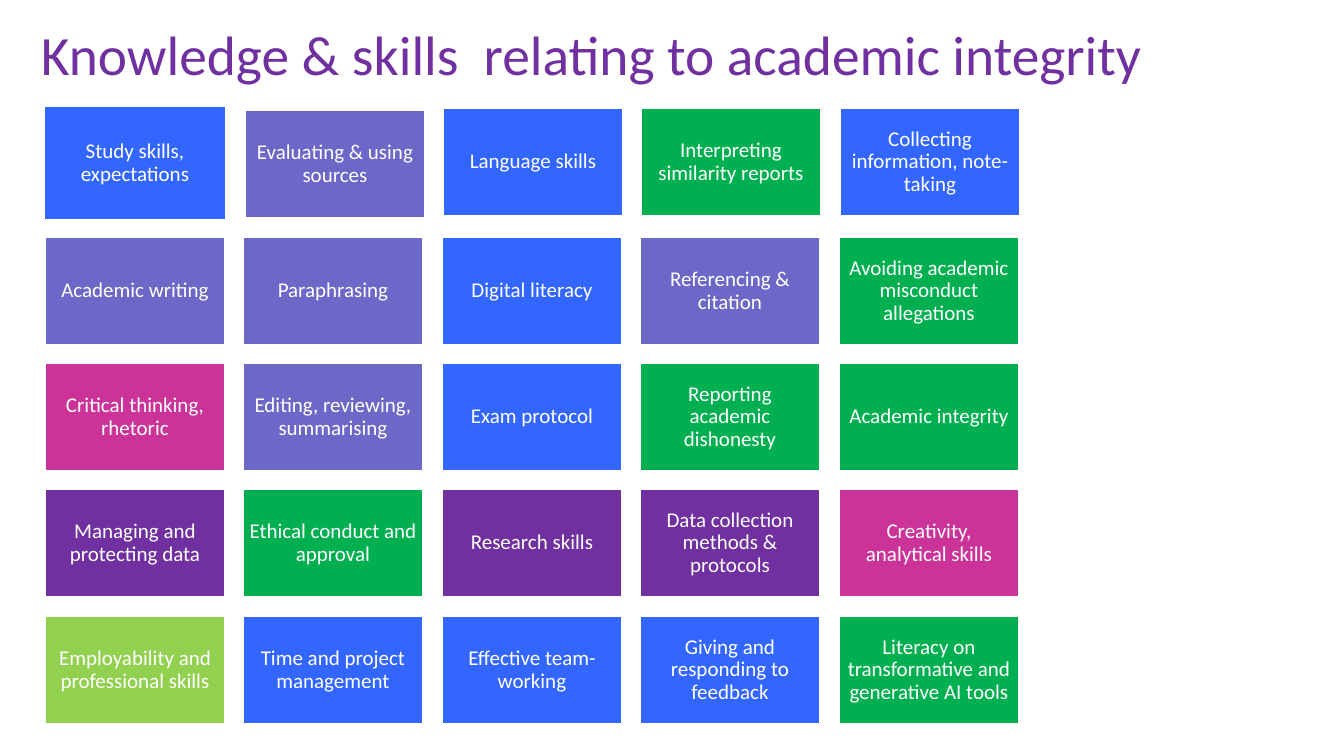
import pptx
import pptx.util
import pptx.dml.color
import pptx.enum.shapes
import pptx.enum.text
from dataclasses import dataclass


@dataclass(frozen=True)
class Theme:
    font: str = "Calibri"
    title_size: float = 39.6
    tile_size: float = 15
    white: str = "FFFFFF"
    blue: str = "3366FF"
    lilac: str = "6D68C8"
    green: str = "00B050"
    pink: str = "CC3399"
    purple: str = "7030A0"
    lime: str = "92D050"


theme = Theme()


def px(n):
    return pptx.util.Emu(round(n * 914400 / 100.8))


def write(sp, text, size, color, align, inset_x, inset_y):
    tf = sp.text_frame
    frame_format = {
        "word_wrap": True,
        "vertical_anchor": pptx.enum.text.MSO_ANCHOR.MIDDLE,
        "margin_left": px(inset_x),
        "margin_right": px(inset_x),
        "margin_top": px(inset_y),
        "margin_bottom": px(inset_y),
    }
    for name, value in frame_format.items():
        setattr(tf, name, value)
    p = tf.paragraphs[0]
    p.alignment = align
    p.line_spacing = 0.9
    r = p.add_run()
    r.text = text
    for name, value in {"name": theme.font, "size": pptx.util.Pt(size)}.items():
        setattr(r.font, name, value)
    r.font.color.rgb = pptx.dml.color.RGBColor.from_string(color)


prs = pptx.Presentation()
prs.slide_width, prs.slide_height = px(1344), px(756)
s = prs.slides.add_slide(prs.slide_layouts[6])

# Title
sp = s.shapes.add_textbox(px(31), px(40), px(1312), px(35))
write(sp, "Knowledge & skills  relating to academic integrity",
      theme.title_size, theme.purple, pptx.enum.text.PP_ALIGN.LEFT, 10, 5)

# Skill tiles, row by row
skills = [
    [("Study skills, expectations", theme.blue),
     ("Evaluating & using sources", theme.lilac),
     ("Language skills", theme.blue),
     ("Interpreting similarity reports", theme.green),
     ("Collecting information, note-taking", theme.blue)],
    [("Academic writing", theme.lilac),
     ("Paraphrasing", theme.lilac),
     ("Digital literacy", theme.blue),
     ("Referencing & citation", theme.lilac),
     ("Avoiding academic misconduct allegations", theme.green)],
    [("Critical thinking, rhetoric", theme.pink),
     ("Editing, reviewing, summarising", theme.lilac),
     ("Exam protocol", theme.blue),
     ("Reporting academic dishonesty", theme.green),
     ("Academic integrity", theme.green)],
    [("Managing and protecting data", theme.purple),
     ("Ethical conduct and approval", theme.green),
     ("Research skills", theme.purple),
     ("Data collection methods & protocols", theme.purple),
     ("Creativity, analytical skills", theme.pink)],
    [("Employability and professional skills", theme.lime),
     ("Time and project management", theme.blue),
     ("Effective team-working", theme.blue),
     ("Giving and responding to feedback", theme.blue),
     ("Literacy on transformative and generative AI tools", theme.green)],
]

# The top row sits slightly off the grid, and its first tile is larger
top_row = [(44, 106, 182, 114), (245, 110, 180, 108)]
top_row += [(46 + 397 * col // 2, 108, 180, 108) for col in range(2, 5)]

for row, tiles in enumerate(skills):
    for col, (text, color) in enumerate(tiles):
        box = (45 + 397 * col // 2, 237 + 379 * (row - 1) // 3, 180, 108)
        if row == 0:
            box = top_row[col]
        sp = s.shapes.add_shape(pptx.enum.shapes.MSO_SHAPE.RECTANGLE,
                                *[px(n) for n in box])
        sp.shadow.inherit = False
        sp.fill.solid()
        sp.fill.fore_color.rgb = pptx.dml.color.RGBColor.from_string(color)
        sp.line.color.rgb = pptx.dml.color.RGBColor.from_string(theme.white)
        sp.line.width = pptx.util.Pt(1)
        write(sp, text, theme.tile_size, theme.white,
              pptx.enum.text.PP_ALIGN.CENTER, 6, 6)

prs.save("out.pptx")
